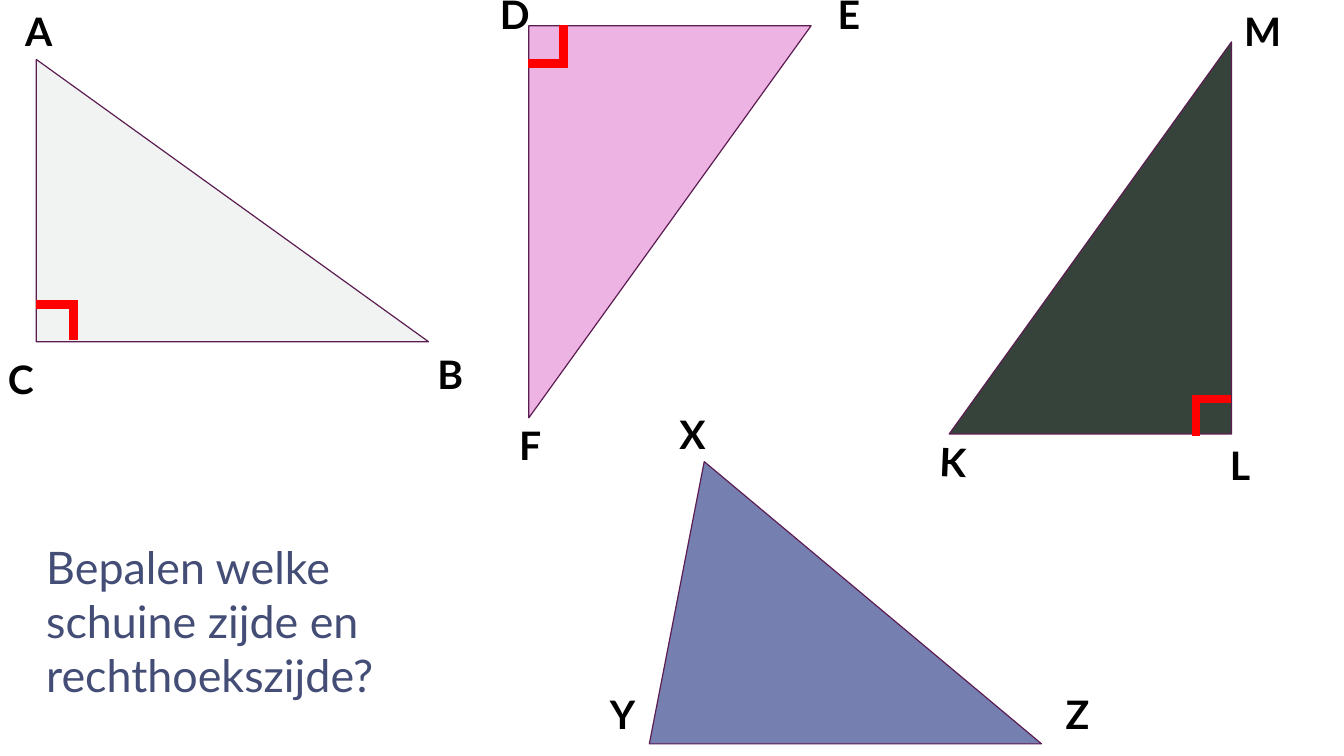
import lxml.etree
import pptx
import pptx.dml.color
import pptx.enum.shapes
import pptx.enum.text
import pptx.oxml.ns
import pptx.util

Inches = pptx.util.Inches

COLORS = {
    "outline": "5B1C51",
    "right_angle": "FF0000",
    "label": "000000",
    "question": "434D76",
    "ABC": "F0F3F1",
    "DEF": "ECB3E3",
    "KLM": "36433A",
    "XYZ": "7580B0",
}


class TriangleSlide:
    font = "Lato"
    base, height = 3.89, 2.8

    def __init__(self, slide):
        self.shapes = slide.shapes

    def color(self, name):
        return pptx.dml.color.RGBColor.from_string(COLORS[name])

    def triangle(self, name, left, top, rotation=0, apex=0):
        triangle = self.shapes.add_shape(
            pptx.enum.shapes.MSO_SHAPE.ISOSCELES_TRIANGLE,
            Inches(left), Inches(top), Inches(self.base), Inches(self.height))
        triangle.adjustments[0] = apex
        triangle.rotation = rotation
        triangle.shadow.inherit = False
        triangle.fill.solid()
        triangle.fill.fore_color.rgb = self.color(name)
        triangle.line.color.rgb = self.color("outline")
        triangle.line.width = pptx.util.Pt(0.85)

    def right_angle(self, *sides):
        mark = self.shapes.add_group_shape()
        for ends in sides:
            side = mark.shapes.add_connector(
                pptx.enum.shapes.MSO_CONNECTOR.STRAIGHT, *map(Inches, ends))
            side.line.color.rgb = self.color("right_angle")
            side.line.width = pptx.util.Pt(6)
            lxml.etree.SubElement(
                side._element.spPr, pptx.oxml.ns.qn("a:effectLst"))

    def text(self, content, left, top, width, height, size, color, bold=False, rotation=0):
        box = self.shapes.add_textbox(
            Inches(left), Inches(top), Inches(width), Inches(height))
        box.rotation = rotation
        frame = box.text_frame
        frame.word_wrap = True
        frame.auto_size = pptx.enum.text.MSO_AUTO_SIZE.SHAPE_TO_FIT_TEXT
        run = frame.paragraphs[0].add_run()
        run.text = content
        run.font.name = self.font
        run.font.size = pptx.util.Pt(size)
        run.font.bold = bold
        run.font.color.rgb = self.color(color)

    def vertex(self, letter, left, top, rotation=0):
        self.text(letter, left, top, 0.34, 0.57, 28, "label", True, rotation)


def main():
    presentation = pptx.Presentation()
    presentation.slide_width = Inches(13.33)
    presentation.slide_height = Inches(7.5)
    page = TriangleSlide(presentation.slides.add_slide(presentation.slide_layouts[6]))

    page.triangle("ABC", 0.36, 0.59)
    page.triangle("DEF", 4.7, 0.8, rotation=90)
    page.triangle("KLM", 8.87, 0.96, rotation=270)
    page.triangle("XYZ", 6.44, 4.58, apex=0.14)

    page.right_angle((0.36, 3.02, 0.73, 3.02), (0.73, 3.37, 0.73, 2.98))
    page.right_angle((5.59, 0.25, 5.59, 0.63), (5.24, 0.63, 5.63, 0.63))
    page.right_angle((11.86, 4.33, 11.86, 3.96), (12.21, 3.96, 11.82, 3.96))

    vertices = [
        ("A", 0.15, 0.02), ("B", 4.24, 3.43), ("C", -0.02, 3.48),
        ("D", 4.86, -0.15), ("E", 8.21, -0.15), ("F", 5.05, 4.13),
        ("L", 12.1, 4.33), ("M", 12.24, 0.02), ("K", 9.22, 4.29, 2.6),
        ("X", 6.64, 4.02), ("Y", 5.95, 6.8), ("Z", 10.47, 6.8),
    ]
    for vertex in vertices:
        page.vertex(*vertex)

    page.text("Bepalen welke schuine zijde en rechthoekszijde?",
              0.36, 5.31, 4.5, 1.72, 32, "question")

    presentation.save("out.pptx")


if __name__ == "__main__":
    main()
